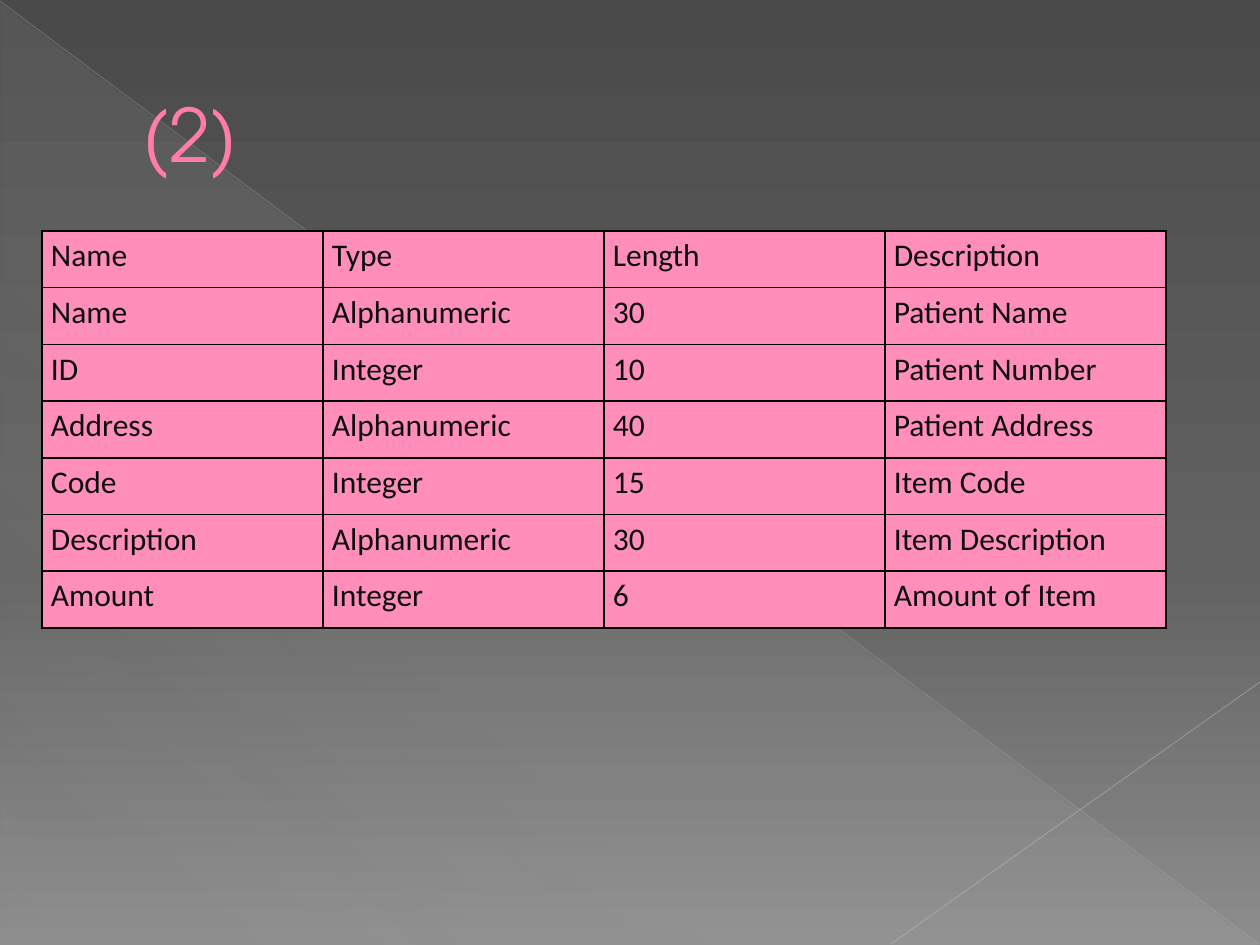
from dataclasses import dataclass

from lxml import etree
from pptx import Presentation
from pptx import util as u
from pptx.dml.color import RGBColor
from pptx.enum import shapes, text
from pptx.oxml.ns import qn

TITLE = "(2)"
ROWS = [
    ("Name", "Type", "Length", "Description"),
    ("Name", "Alphanumeric", "30", "Patient Name"),
    ("ID", "Integer", "10", "Patient Number"),
    ("Address", "Alphanumeric", "40", "Patient Address"),
    ("Code", "Integer", "15", "Item Code"),
    ("Description", "Alphanumeric", "30", "Item Description"),
    ("Amount", "Integer", "6", "Amount of Item"),
]

# Stops are (position %, colour, opacity %).
BACKDROP = [(0, "4A4A4A", 100), (60, "626262", 100), (100, "8C8C8C", 100)]
SHEEN = [(0, "D2D2D2", 10), (70, "D2D2D2", 8), (100, "D2D2D2", 1)]
# Start and end in px, colour, width in points, opacity %.
RAYS = [
    ((0, 1), (1259, 944), "BFBFBF", 0.39, 35),
    ((1260, 682), (891, 944), "C6C6C6", 0.47, 45),
]

PAGE_SIZE = (1260, 945)
TRIANGLE = (1, 3, 1257, 942)
TITLE_BOX = (63, 37, 1134, 193)
TITLE_INDENT = 67
TABLE = (42, 231, 1124, 397)
CELL_INSET = 9


@dataclass(frozen=True)
class Theme:
    title: str = "FF7DA7"
    title_edge: str = "B12761"
    cell: str = "FF8EBA"
    ink: str = "0D0D0D"
    border: str = "000000"
    title_font: str = "TeX Gyre Adventor"
    body_font: str = "Calibri"
    title_size: int = 42
    body_size: int = 18


THEME = Theme()


def px(*lengths):
    return [u.Emu(length * u.Inches(1) // 126) for length in lengths]


def add_xml(parent, tag, **attributes):
    child = etree.SubElement(parent, qn(tag))
    for name, value in attributes.items():
        child.set(name, str(value))
    return child


def add_color(parent, color, opacity=100):
    node = add_xml(parent, "a:srgbClr", val=color)
    if opacity < 100:
        add_xml(node, "a:alpha", val=opacity * 1000)


def set_gradient(fill, owner, stops, angle):
    """Fill owner with any number of stops, angle in clockwise degrees."""
    fill.gradient()
    gradient = next(owner.iter(qn("a:gradFill")))
    for child in list(gradient):
        gradient.remove(child)
    stop_list = add_xml(gradient, "a:gsLst")
    for position, color, opacity in stops:
        add_color(add_xml(stop_list, "a:gs", pos=position * 1000), color, opacity)
    add_xml(gradient, "a:lin", ang=angle * 60000, scaled=0)


def add_line_xml(parent, tag, color, points, opacity=100):
    line = add_xml(parent, tag, w=u.Pt(points))
    add_color(add_xml(line, "a:solidFill"), color, opacity)
    return line


def write(frame, words, *, size, font, color, spacing=None):
    para = frame.paragraphs[0]
    para.line_spacing = spacing
    span = para.add_run()
    span.text = words
    span.font.size = u.Pt(size)
    span.font.name = font
    span.font.color.rgb = RGBColor.from_string(color)
    return para, span


def add_backdrop(page):
    set_gradient(page.background.fill, page.element, BACKDROP, 90)
    triangle = page.shapes.add_shape(
        shapes.MSO_SHAPE.RIGHT_TRIANGLE, *px(*TRIANGLE))
    triangle.shadow.inherit = False
    triangle.line.fill.background()
    set_gradient(triangle.fill, triangle.element, SHEEN, 133)
    for start, end, color, points, opacity in RAYS:
        ray = page.shapes.add_connector(
            shapes.MSO_CONNECTOR.STRAIGHT, *px(*start, *end))
        add_line_xml(ray.element.spPr, "a:ln", color, points, opacity)
        add_xml(ray.element.spPr, "a:effectLst")


def add_field_table(page):
    table = page.shapes.add_table(len(ROWS), len(ROWS[0]), *px(*TABLE)).table
    for r, row in enumerate(ROWS):
        for c, words in enumerate(row):
            cell = table.cell(r, c)
            cell.margin_left, cell.margin_right = px(CELL_INSET, CELL_INSET)
            cell.margin_top = cell.margin_bottom = 0
            write(cell.text_frame, words, size=THEME.body_size,
                  font=THEME.body_font, color=THEME.ink, spacing=1.15)
            properties = cell._tc.get_or_add_tcPr()
            for side in ("a:lnL", "a:lnR", "a:lnT", "a:lnB"):
                add_line_xml(properties, side, THEME.border, 1)
            cell.fill.solid()
            cell.fill.fore_color.rgb = RGBColor.from_string(THEME.cell)


def add_title(page):
    box = page.shapes.add_textbox(*px(*TITLE_BOX))
    frame = box.text_frame
    frame.word_wrap = True
    frame.vertical_anchor = text.MSO_ANCHOR.MIDDLE
    para, span = write(frame, TITLE, size=THEME.title_size,
                       font=THEME.title_font, color=THEME.title)
    para._p.get_or_add_pPr().set("marL", str(px(TITLE_INDENT)[0]))
    properties = span._r.get_or_add_rPr()
    properties.insert(0, add_line_xml(properties, "a:ln", THEME.title_edge, 0.5))


def main():
    deck = Presentation()
    deck.slide_width, deck.slide_height = px(*PAGE_SIZE)
    page = deck.slides.add_slide(deck.slide_layouts[6])
    add_backdrop(page)
    add_field_table(page)
    add_title(page)
    deck.save("out.pptx")


if __name__ == "__main__":
    main()
